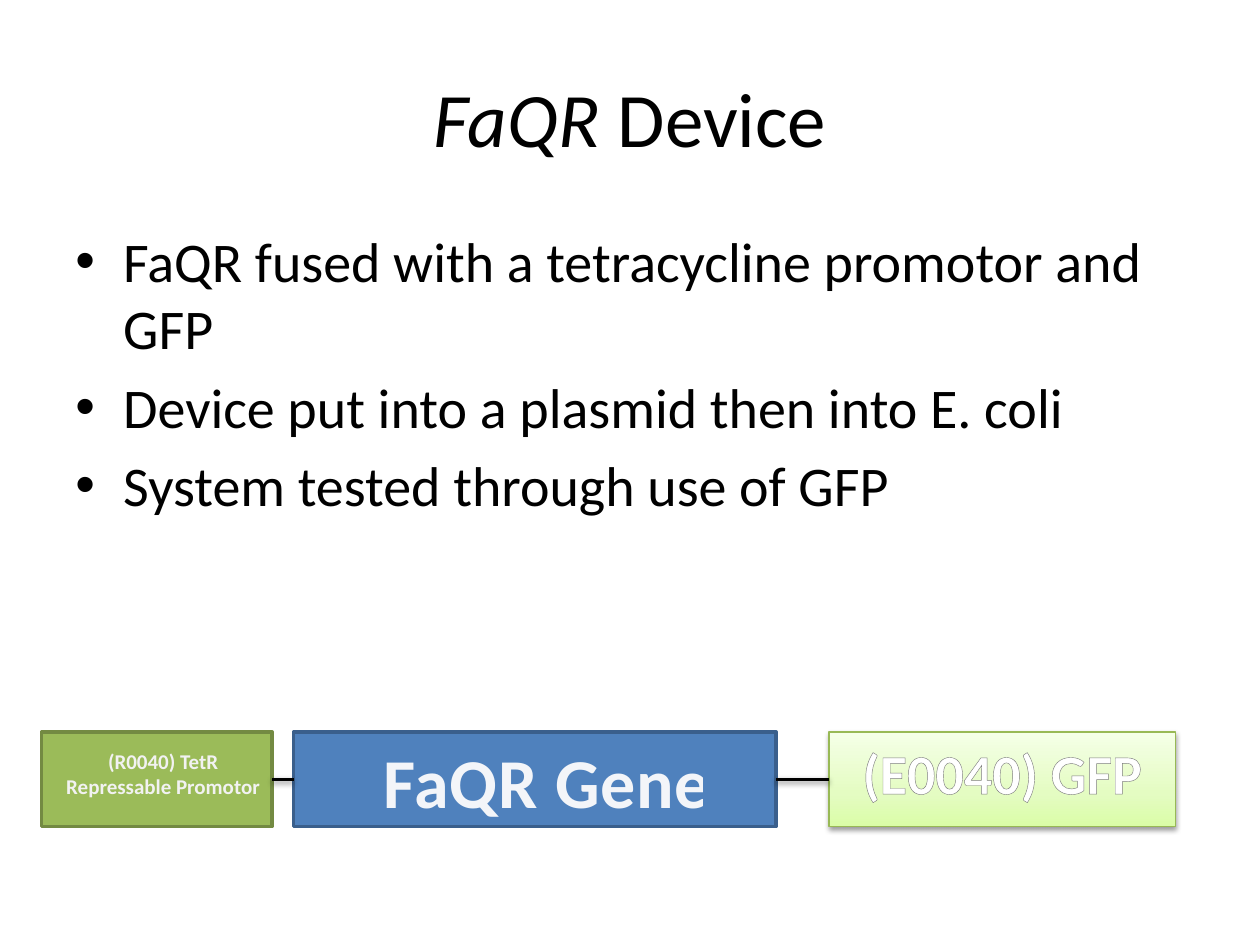
from dataclasses import dataclass

from lxml.etree import SubElement
from pptx import Presentation
from pptx.dml.color import RGBColor
from pptx.enum.shapes import MSO_CONNECTOR, MSO_SHAPE
from pptx.enum.text import MSO_ANCHOR, PP_ALIGN
from pptx.oxml.ns import qn
from pptx.util import Inches, Pt


@dataclass(frozen=True)
class Theme:
    font: str = "Calibri"
    title_size: float = 44
    body_size: float = 32
    promoter_size: float = 12
    gene_size: float = 40
    reporter_size: float = 32
    ink: str = "000000"
    promoter_fill: str = "9BBB59"
    promoter_line: str = "738A42"
    promoter_text: str = "F2F2F2"
    gene_fill: str = "4F81BD"
    gene_line: str = "3A5F8C"
    gene_text: str = "FCFCFD"
    gene_outline: str = "101A26"
    reporter_line: str = "98B955"
    label_outline: str = "7D7D7D"
    reporter_fill: tuple = ((0, "DAFDA7"), (35, "E4FCC2"), (100, "F5FFE7"))
    reporter_text: tuple = ((0, "FFFFFF"), (9, "FFFFFF"), (50, "7F7F7F"),
                            (79, "FFFFFF"), (100, "FFFFFF"))


THEME = Theme()


def add_node(parent, tag, **attributes):
    return SubElement(parent, qn(tag), {k: str(v) for k, v in attributes.items()})


def add_color(parent, color, alpha=100):
    node = add_node(parent, "a:srgbClr", val=color)
    if alpha < 100:
        add_node(node, "a:alpha", val=alpha * 1000)


def add_gradient(parent, stops, angle):
    gradient = add_node(parent, "a:gradFill", rotWithShape=1)
    stop_list = add_node(gradient, "a:gsLst")
    for position, color in stops:
        add_color(add_node(stop_list, "a:gs", pos=position * 1000), color)
    add_node(gradient, "a:lin", ang=angle * 60000, scaled=0)
    return gradient


def add_effects(properties, shadow):
    effects = add_node(properties, "a:effectLst")
    if shadow:
        outer = add_node(effects, "a:outerShdw", blurRad=Pt(3.1), dist=Pt(1.6),
                         dir=90 * 60000, rotWithShape=0)
        add_color(outer, THEME.ink, 38)


def add_text_box(slide, box, wrap=True):
    frame = slide.shapes.add_textbox(*map(Inches, box)).text_frame
    frame.word_wrap = wrap
    return frame


def add_run(paragraph, text, size, color=THEME.ink, italic=False):
    run = paragraph.add_run()
    run.text = text
    run.font.name = THEME.font
    run.font.size = Pt(size)
    run.font.italic = italic
    run.font.color.rgb = RGBColor.from_string(color)
    return run


def add_title(slide, box):
    frame = add_text_box(slide, box)
    frame.vertical_anchor = MSO_ANCHOR.MIDDLE
    heading = frame.paragraphs[0]
    heading.alignment = PP_ALIGN.CENTER
    add_run(heading, "FaQR", THEME.title_size, italic=True)
    add_run(heading, " Device", THEME.title_size)


def add_bullets(slide, box, points):
    frame = add_text_box(slide, box)
    for index, point in enumerate(points):
        paragraph = frame.add_paragraph() if index else frame.paragraphs[0]
        properties = paragraph._p.get_or_add_pPr()
        properties.set("marL", str(Inches(0.38)))
        properties.set("indent", str(Inches(-0.38)))
        add_node(properties, "a:buFont", typeface="Arial")
        add_node(properties, "a:buChar", char="•")
        if index:
            paragraph.space_before = Pt(0.2 * THEME.body_size)
        add_run(paragraph, point, THEME.body_size)


def add_part(slide, box, line, line_width, fill=None, stops=None):
    part = slide.shapes.add_shape(MSO_SHAPE.RECTANGLE, *map(Inches, box))
    part.line.color.rgb = RGBColor.from_string(line)
    part.line.width = Pt(line_width)
    if stops:
        properties = part._element.spPr
        gradient = add_gradient(properties, stops, 270)
        properties.find(qn("a:prstGeom")).addnext(gradient)
    else:
        part.fill.solid()
        part.fill.fore_color.rgb = RGBColor.from_string(fill)
    add_effects(part._element.spPr, shadow=bool(stops))


def add_link(slide, start, end, y):
    link = slide.shapes.add_connector(
        MSO_CONNECTOR.STRAIGHT, *map(Inches, (start, y, end, y)))
    link.line.color.rgb = RGBColor.from_string(THEME.ink)
    link.line.width = Pt(2)
    add_effects(link._element.spPr, shadow=True)


def add_label(slide, box, text, size, outline, outline_width, color=THEME.ink,
              alpha=100, stops=None, spacing=0, wrap=True):
    frame = add_text_box(slide, box, wrap)
    paragraph = frame.paragraphs[0]
    paragraph.alignment = PP_ALIGN.CENTER
    run = add_run(paragraph, text, size, color)
    run.font.bold = True
    properties = run._r.get_or_add_rPr()
    if spacing:
        properties.set("spc", str(int(spacing * 100)))
    fill = properties.find(qn("a:solidFill"))
    # Letter outline comes before the letter fill
    edge = add_node(properties, "a:ln", w=Pt(outline_width))
    add_color(add_node(edge, "a:solidFill"), outline,
              alpha=6 if alpha < 100 else 100)
    fill.addprevious(edge)
    if stops:
        properties.replace(fill, add_gradient(properties, stops, 90))
    elif alpha < 100:
        add_node(fill[0], "a:alpha", val=alpha * 1000)


def add_gene_diagram(slide, box):
    left, top, width, height = box
    promoter, gene, reporter = (0, 1.83), (2, 3.83), (6.25, 2.75)

    def part_box(part):
        return left + part[0], top, part[1], height

    # Parts of the device
    add_part(slide, part_box(promoter), THEME.promoter_line, 2, THEME.promoter_fill)
    add_part(slide, part_box(gene), THEME.gene_line, 2, THEME.gene_fill)
    add_part(slide, part_box(reporter), THEME.reporter_line, 0.75,
             stops=THEME.reporter_fill)

    # Links between neighbouring parts
    for before, after in ((promoter, gene), (gene, reporter)):
        add_link(slide, left + sum(before), left + after[0], top + height / 2)

    # Part names
    add_label(slide, (left + 0.09, top + 0.08, 1.75, 0.5),
              "(R0040) TetR Repressable Promotor", THEME.promoter_size,
              THEME.label_outline, 0.83, THEME.promoter_text)
    add_label(slide, (left + 2.59, top, 2.84, 0.77), "FaQR Gene",
              THEME.gene_size, THEME.gene_outline, 1.06, THEME.gene_text,
              alpha=95, spacing=0.5, wrap=False)
    add_label(slide, (left + 5.92, top, 3.41, 0.64), "(E0040) GFP",
              THEME.reporter_size, THEME.label_outline, 0.83,
              stops=THEME.reporter_text)


def main():
    deck = Presentation()
    deck.slide_width, deck.slide_height = Inches(10), Inches(7.5)
    slide = deck.slides.add_slide(deck.slide_layouts[6])
    add_title(slide, (0.5, 0.3, 9, 1.25))
    add_bullets(slide, (0.5, 1.75, 9, 4.95), (
        "FaQR fused with a tetracycline promotor and GFP",
        "Device put into a plasmid then into E. coli",
        "System tested through use of GFP",
    ))
    add_gene_diagram(slide, (0.33, 5.81, 9, 0.75))
    deck.save("out.pptx")


if __name__ == "__main__":
    main()
